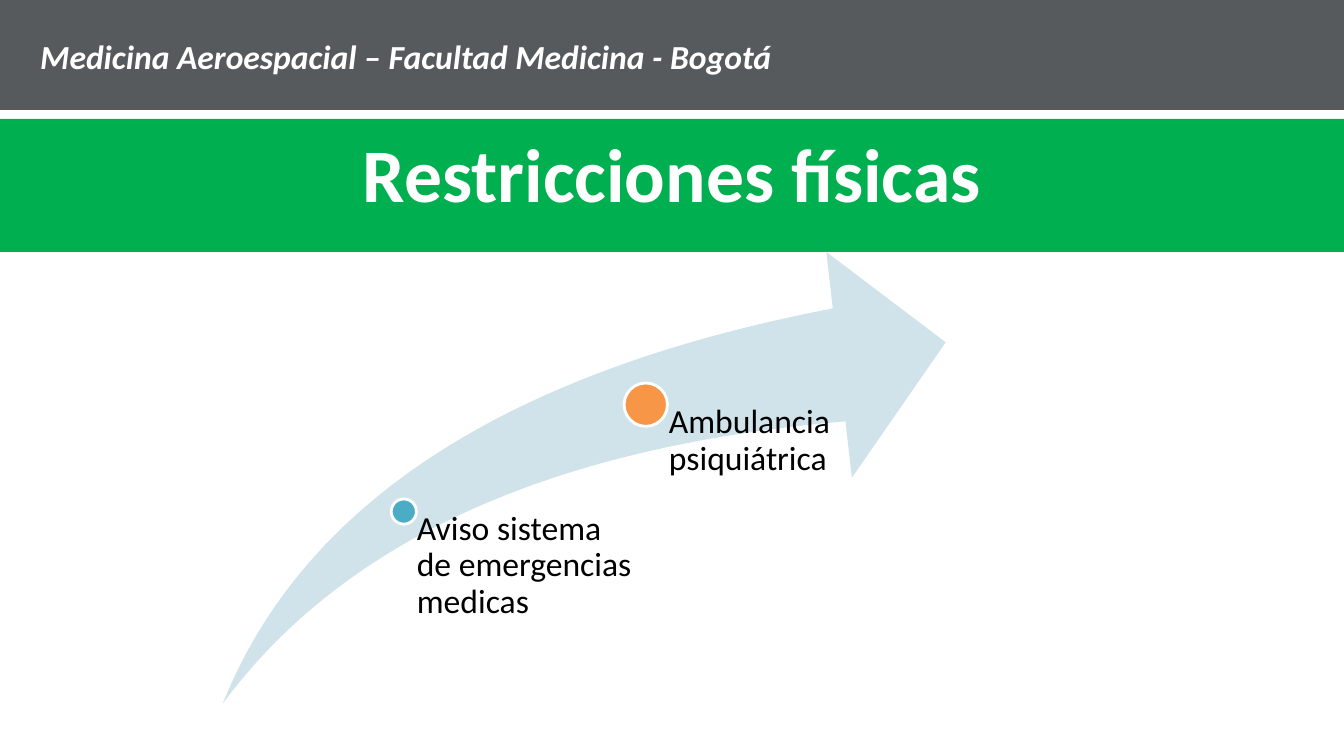
from pptx import Presentation
from pptx.dml.color import RGBColor
from pptx.enum.shapes import MSO_SHAPE as SHAPE
from pptx.enum.text import MSO_ANCHOR as ANCHOR, MSO_AUTO_SIZE as AUTO, PP_ALIGN as ALIGN
from pptx.util import Inches, Pt

COLORS = {
    "header": "565A5C",
    "title": "00B050",
    "arrow": "D0E3EA",
    "teal": "4BACC6",
    "orange": "F79646",
    "white": "FFFFFF",
    "black": "000000",
}


def rgb(name):
    return RGBColor.from_string(COLORS[name])


def add_filled(s, kind, box, fill, outline=None):
    sp = s.shapes.add_shape(kind, *map(Inches, box))
    sp.shadow.inherit = False
    sp.fill.solid()
    sp.fill.fore_color.rgb = rgb(fill)
    if outline:
        sp.line.color.rgb = rgb(outline)
        sp.line.width = Pt(2)
    else:
        sp.line.fill.background()
    return sp


def add_run(p, text, size, color, bold=False, italic=False):
    r = p.add_run()
    r.text = text
    r.font.name = "Calibri"
    r.font.size = Pt(size)
    r.font.color.rgb = rgb(color)
    r.font.bold = bold
    r.font.italic = italic


def set_title(s, text):
    sp = s.shapes.title
    sp.left, sp.top, sp.width, sp.height = map(Inches, (0, 1.18, 13.33, 1.32))
    sp.fill.solid()
    sp.fill.fore_color.rgb = rgb("title")
    tf = sp.text_frame
    tf.auto_size = AUTO.NONE
    tf.vertical_anchor = ANCHOR.TOP
    tf.margin_top = Inches(0.08)
    p = tf.paragraphs[0]
    p.alignment = ALIGN.CENTER
    add_run(p, text, 54, "white", bold=True)


def add_header(s, text):
    add_filled(s, SHAPE.RECTANGLE, (0, 0, 13.33, 1.09), "header")
    tf = s.shapes.add_textbox(*map(Inches, (0.3, 0.31, 7.51, 0.5))).text_frame
    tf.word_wrap = False
    tf.auto_size = AUTO.SHAPE_TO_FIT_TEXT
    add_run(tf.paragraphs[0], text, 24, "white", bold=True, italic=True)


def add_step(s, left, top, size, color, text, inset):
    """Add a dot and its label, which starts at the centre of the dot."""
    add_filled(s, SHAPE.OVAL, (left, top, size, size), color, "white")
    x, y = left + size / 2, top + size / 2
    tf = s.shapes.add_textbox(*map(Inches, (x, y, 2.33, 6.98 - y))).text_frame
    tf.word_wrap = True
    tf.margin_left = Inches(inset)
    tf.margin_top = tf.margin_right = tf.margin_bottom = 0
    p = tf.paragraphs[0]
    p.line_spacing = 0.9
    add_run(p, text, 24, "black")


def main():
    prs = Presentation()
    prs.slide_width, prs.slide_height = Inches(13.33), Inches(7.5)
    s = prs.slides.add_slide(prs.slide_layouts[5])

    set_title(s, "Restricciones físicas")
    arrow = add_filled(s, SHAPE.SWOOSH_ARROW, (2.21, 2.5, 7.17, 4.48), "arrow")
    arrow.adjustments[0] = arrow.adjustments[1] = 0.25
    add_step(s, 3.88, 4.95, 0.25, "teal", "Aviso sistema de emergencias medicas", 0.13)
    add_step(s, 6.19, 3.8, 0.43, "orange", "Ambulancia psiquiátrica", 0.23)
    add_header(s, "Medicina Aeroespacial – Facultad Medicina - Bogotá")

    prs.save("out.pptx")


if __name__ == "__main__":
    main()
